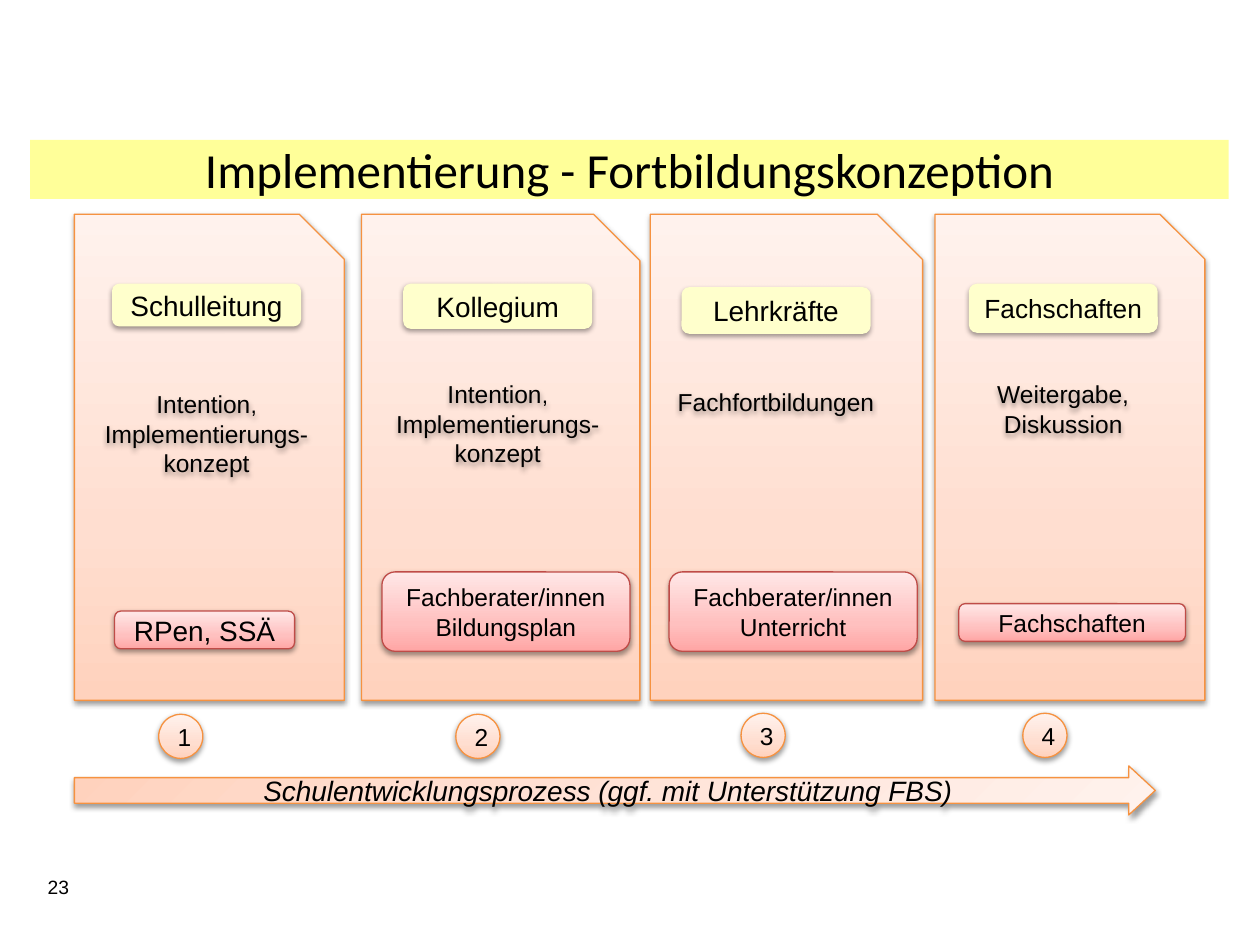
from lxml.etree import SubElement
from pptx import Presentation
from pptx.dml.color import RGBColor
from pptx.enum.shapes import MSO_SHAPE
from pptx.enum.text import MSO_ANCHOR, MSO_AUTO_SIZE, PP_ALIGN
from pptx.oxml import parse_xml
from pptx.oxml.ns import nsdecls, qn
from pptx.util import Cm, Pt

TITLE = "Implementierung - Fortbildungskonzeption"
PROCESS = "Schulentwicklungsprozess (ggf. mit Unterstützung FBS)"
PAGE = "23"

# Lengths in cm: boxes are (left, top, width, height); texts are lists of
# paragraphs, each a list of (text, size) runs.
INTENTION = [[("Intention", 14), (", ", 13), ("Implementierungs-konzept", 14)]]
STEPS = [
    dict(card=(1.5, 5.44),
         group=("Schulleitung", 16, (2.26, 5.72, 3.81, 0.86)),
         topic=(INTENTION, (1.5, 7.72, 5.33, 2.06)),
         lead=("RPen, SSÄ", 16, (2.31, 12.32, 3.63, 0.76)),
         badge=(3.2, 14.4)),
    dict(card=(7.29, 5.61),
         group=("Kollegium", 16, (8.13, 5.72, 3.81, 0.91)),
         topic=(INTENTION, (7.37, 7.52, 5.33, 2.06)),
         lead=("Fachberater/innen Bildungsplan", 14, (7.7, 11.53, 5, 1.6)),
         badge=(9.19, 14.4)),
    dict(card=(13.11, 5.49),
         group=("Lehrkräfte", 16, (13.74, 5.79, 3.81, 0.94)),
         topic=([[("Fachfortbildungen", 14)]], (12.98, 7.67, 5.33, 0.86)),
         lead=("Fachberater/innen Unterricht", 14, (13.49, 11.53, 5, 1.6)),
         badge=(14.94, 14.38)),
    dict(card=(18.85, 5.44),
         group=("Fachschaften", 15, (19.53, 5.72, 3.81, 0.99)),
         topic=([[("Weitergabe,", 14)], [("Diskussion", 14)]], (18.77, 7.52, 5.33, 1.45)),
         lead=("Fachschaften", 14, (19.33, 12.17, 4.57, 0.76)),
         badge=(20.62, 14.38)),
]
CARD_TOP, CARD_HEIGHT, BADGE_SIZE = 4.32, 9.8, 0.89

ORANGE = ("FFD2BD", "FFDED0", "FFF2ED")
RED = ("FFA6A5", "FFC0BF", "FFE7E7")
ORANGE_LINE, RED_LINE = "F69240", "BF4C48"
UPWARD = '<a:lin ang="16200000" scaled="0"/>'
FROM_CORNER = '<a:path path="circle"><a:fillToRect r="100000" b="100000"/></a:path>'


def color(value):
    return RGBColor.from_string(value)


def add_shadow(shape):
    shape.shadow.inherit = False
    effects = shape._element.spPr.find(qn("a:effectLst"))
    outer = SubElement(effects, qn("a:outerShdw"), blurRad="39370", dist="20320",
                       dir="5400000", rotWithShape="0")
    black = SubElement(outer, qn("a:srgbClr"), val="000000")
    SubElement(black, qn("a:alpha"), val="38000")


def fill_shape(shape, fill, direction):
    """Fill with one colour, or with three colours blended along direction."""
    shape.fill.solid()
    if isinstance(fill, str):
        shape.fill.fore_color.rgb = color(fill)
        return
    stops = "".join(f'<a:gs pos="{position}"><a:srgbClr val="{value}"/></a:gs>'
                    for position, value in zip((0, 35000, 100000), fill))
    gradient = parse_xml(f'<a:gradFill {nsdecls("a")} rotWithShape="1">'
                         f"<a:gsLst>{stops}</a:gsLst>{direction}</a:gradFill>")
    properties = shape._element.spPr
    properties.replace(properties.find(qn("a:solidFill")), gradient)


def write(shape, paragraphs, align=PP_ALIGN.CENTER, font="Arial", italic=None):
    frame = shape.text_frame
    frame.word_wrap = True
    for index, runs in enumerate(paragraphs):
        paragraph = frame.add_paragraph() if index else frame.paragraphs[0]
        paragraph.alignment = align
        for text, size in runs:
            run = paragraph.add_run()
            run.text = text
            run.font.size = Pt(size)
            run.font.name = font
            run.font.italic = italic
            run.font.color.rgb = color("000000")


def add_box(slide, kind, box, fill, line=None, text=None, size=14,
            shadow=True, direction=UPWARD, italic=None):
    shape = slide.shapes.add_shape(kind, *map(Cm, box))
    fill_shape(shape, fill, direction)
    if line:
        shape.line.color.rgb = color(line)
        shape.line.width = Pt(0.75)
    else:
        shape.line.fill.background()
    if shadow:
        add_shadow(shape)
    else:
        shape.shadow.inherit = False
    if text:
        shape.text_frame.vertical_anchor = MSO_ANCHOR.MIDDLE
        write(shape, [[(text, size)]], italic=italic)
    return shape


def add_text(slide, box, paragraphs, align=PP_ALIGN.CENTER):
    label = slide.shapes.add_textbox(*map(Cm, box))
    label.text_frame.auto_size = MSO_AUTO_SIZE.SHAPE_TO_FIT_TEXT
    write(label, paragraphs, align)
    return label


def main():
    deck = Presentation()
    deck.slide_width, deck.slide_height = Cm(25.4), Cm(19.05)
    slide = deck.slides.add_slide(deck.slide_layouts[5])

    title = slide.shapes.title
    title.left, title.top, title.width, title.height = map(Cm, (0.61, 2.67, 24.16, 1.45))
    title.text_frame.auto_size = MSO_AUTO_SIZE.NONE
    write(title, [[(TITLE, 28)]], font="Calibri")
    band = add_box(slide, MSO_SHAPE.RECTANGLE, (0.61, 2.82, 24.16, 1.19), "FFFF99", shadow=False)
    title._element.addprevious(band._element)

    arrow = add_box(slide, MSO_SHAPE.RIGHT_ARROW, (1.5, 15.44, 21.79, 0.99), ORANGE,
                    ORANGE_LINE, PROCESS, 16, direction=FROM_CORNER, italic=True)
    arrow.adjustments[0], arrow.adjustments[1] = 0.52, 0.54
    frame = arrow.text_frame
    frame.margin_left = frame.margin_right = frame.margin_top = frame.margin_bottom = Cm(0.1)

    for number, step in enumerate(STEPS, 1):
        left, width = step["card"]
        add_box(slide, MSO_SHAPE.SNIP_1_RECTANGLE, (left, CARD_TOP, width, CARD_HEIGHT),
                ORANGE, ORANGE_LINE)
        text, size, box = step["lead"]
        add_box(slide, MSO_SHAPE.ROUNDED_RECTANGLE, box, RED, RED_LINE, text, size)
        text, size, box = step["group"]
        add_box(slide, MSO_SHAPE.ROUNDED_RECTANGLE, box, "FFFFCC", None, text, size)
        paragraphs, box = step["topic"]
        add_shadow(add_text(slide, box, paragraphs))
        add_box(slide, MSO_SHAPE.OVAL, (*step["badge"], BADGE_SIZE, BADGE_SIZE),
                ORANGE, ORANGE_LINE, str(number))

    add_text(slide, (0.71, 17.53, 1.4, 0.74), [[(PAGE, 11)]], PP_ALIGN.LEFT)
    deck.save("out.pptx")


if __name__ == "__main__":
    main()
